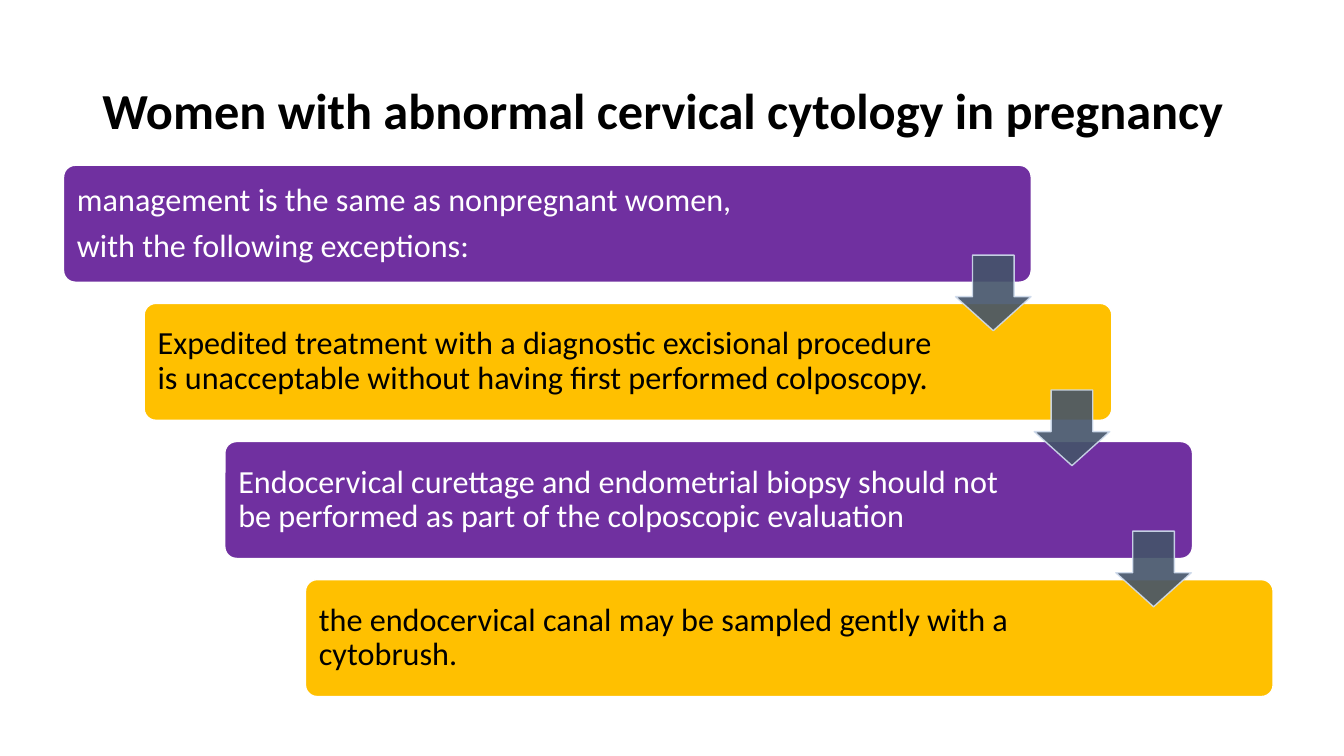
import dataclasses

import pptx
import pptx.dml.color
import pptx.enum.shapes
import pptx.enum.text
import pptx.oxml.ns
import pptx.util
from lxml import etree

Pt = pptx.util.Pt
SHAPES = pptx.enum.shapes.MSO_SHAPE

COLORS = {
    "purple": "7030A0",
    "gold": "FFC000",
    "slate": "44546A",
    "pale": "D2DEEF",
    "white": "FFFFFF",
    "black": "000000",
}
STEP_LEFT, STEP_TOP = 45.4, 118.1
STEP_WIDTH, STEP_HEIGHT = 691.2, 83.5
SHIFT_X, SHIFT_Y = 57.6, 98.65
TEXT_OFFSET = 2.5
ARROW_SIZE = 54


@dataclasses.dataclass
class Step:
    paragraphs: list[str]
    fill: str
    color: str
    text_width: float


@dataclasses.dataclass
class Arrow:
    left: float
    top: float


STEPS = [
    Step(["management is the same as nonpregnant women,",
          "with the following exceptions:"], "purple", "white", 594),
    Step(["Expedited treatment with a diagnostic excisional procedure is "
          "unacceptable without having first performed colposcopy."],
         "gold", "black", 574),
    Step(["Endocervical curettage and endometrial biopsy should not be "
          "performed as part of the colposcopic evaluation"],
         "purple", "white", 575),
    Step(["the endocervical canal may be sampled gently with a cytobrush."],
         "gold", "black", 574),
]
ARROWS = [Arrow(682.5, 182.2), Arrow(738.7, 278.6), Arrow(797, 379.4)]


def rgb(name: str) -> pptx.dml.color.RGBColor:
    return pptx.dml.color.RGBColor.from_string(COLORS[name])


def set_alpha(fill, percent: int) -> None:
    clr = fill._xPr.find(".//" + pptx.oxml.ns.qn("a:srgbClr"))
    alpha = etree.SubElement(clr, pptx.oxml.ns.qn("a:alpha"))
    alpha.set("val", str(percent * 1000))


def add_text(slide, paragraphs: list[str], *, left: float, top: float,
             width: float, height: float, size: float, color: str,
             bold: bool = False, inset_x: float = 7.2,
             inset_y: float = 7.2, space_after: float = 0) -> None:
    tf = slide.shapes.add_textbox(
        Pt(left), Pt(top), Pt(width), Pt(height)).text_frame
    tf.word_wrap = True
    tf.vertical_anchor = pptx.enum.text.MSO_ANCHOR.MIDDLE
    tf.margin_left = tf.margin_right = Pt(inset_x)
    tf.margin_top = tf.margin_bottom = Pt(inset_y)
    for i, text in enumerate(paragraphs):
        p = tf.add_paragraph() if i else tf.paragraphs[0]
        p.line_spacing = 0.9
        p.space_after = Pt(space_after)
        r = p.add_run()
        r.text = text
        r.font.name = "Calibri"
        r.font.size = Pt(size)
        r.font.bold = bold
        r.font.color.rgb = rgb(color)


def add_block(slide, kind: SHAPES, left: float, top: float, width: float,
              height: float, fill: str, line: str,
              adjustments: list[float], alpha: int = 100) -> None:
    sp = slide.shapes.add_shape(
        kind, Pt(left), Pt(top), Pt(width), Pt(height))
    sp.shadow.inherit = False
    for i, value in enumerate(adjustments):
        sp.adjustments[i] = value
    sp.fill.solid()
    sp.fill.fore_color.rgb = rgb(fill)
    sp.line.color.rgb = rgb(line)
    sp.line.width = Pt(1)
    if alpha < 100:
        set_alpha(sp.fill, alpha)
        set_alpha(sp.line.fill, alpha)


def add_step(slide, step: Step, index: int) -> None:
    left = STEP_LEFT + index * SHIFT_X
    top = STEP_TOP + index * SHIFT_Y
    add_block(slide, SHAPES.ROUNDED_RECTANGLE, left, top, STEP_WIDTH,
              STEP_HEIGHT, step.fill, "white", [0.1])
    add_text(slide, step.paragraphs, left=left + TEXT_OFFSET,
             top=top + TEXT_OFFSET, width=step.text_width,
             height=STEP_HEIGHT - 2 * TEXT_OFFSET, size=23,
             color=step.color, space_after=8)


def main() -> None:
    prs = pptx.Presentation()
    prs.slide_width, prs.slide_height = Pt(960), Pt(540)
    slide = prs.slides.add_slide(prs.slide_layouts[6])
    add_text(slide, ["Women with abnormal cervical cytology in pregnancy"],
             left=66, top=28.75, width=828, height=104.4, size=36,
             color="black", bold=True, inset_y=3.6)
    for i, step in enumerate(STEPS):
        add_step(slide, step, i)
    for arrow in ARROWS:
        add_block(slide, SHAPES.DOWN_ARROW, arrow.left, arrow.top, ARROW_SIZE,
                  ARROW_SIZE, "slate", "pale", [0.55, 0.45], alpha=90)
    prs.save("out.pptx")


if __name__ == "__main__":
    main()
